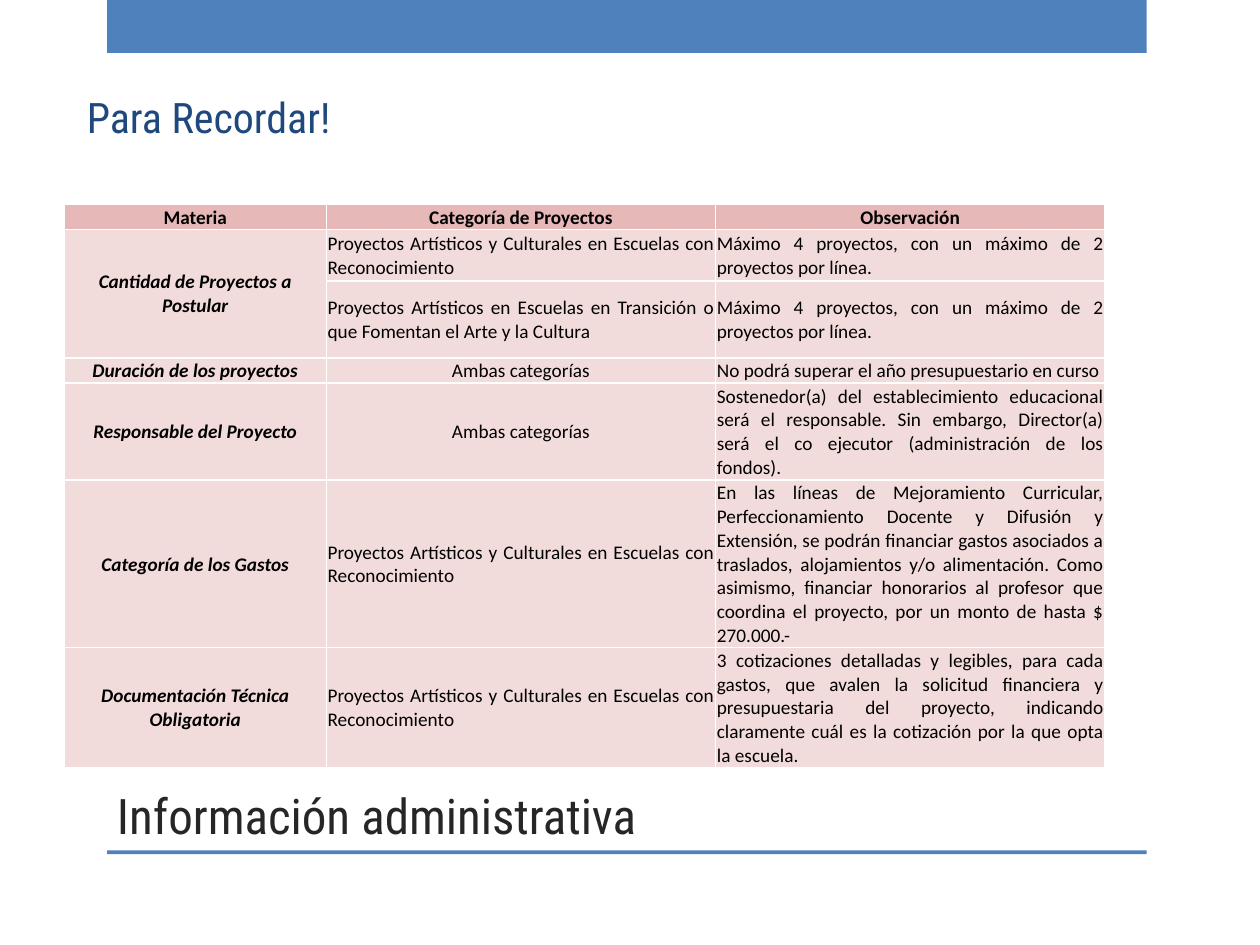
from lxml import etree
from pptx import Presentation
from pptx.dml.color import RGBColor
from pptx.enum import shapes, text
from pptx.oxml import ns
from pptx.util import Inches, Pt

BLUE, NAVY, CHARCOAL = "4F81BD", "1F497D", "262626"
HEADER_PINK, BODY_PINK, WHITE, BLACK = "E6B9B8", "F2DCDB", "FFFFFF", "000000"
TITLE_FONT, TABLE_FONT = "Roboto Condensed", "Calibri"

COLUMN_WIDTHS = [2.08, 3.09, 3.09]
ROW_HEIGHTS = [0.2, 0.41, 0.61, 0.2, 0.77, 1.33, 0.95]
RECOGNISED = "Proyectos Artísticos y Culturales en Escuelas con Reconocimiento"
BOTH = "Ambas categorías"
MAXIMUM = "Máximo 4 proyectos, con un máximo de 2 proyectos por línea."
ROWS = [
    ("Materia", "Categoría de Proyectos", "Observación"),
    ("Cantidad de Proyectos a Postular", RECOGNISED, MAXIMUM),
    ("", "Proyectos Artísticos en Escuelas en Transición o que Fomentan "
     "el Arte y la Cultura", MAXIMUM),
    ("Duración de los proyectos", BOTH,
     "No podrá superar el año presupuestario en curso"),
    ("Responsable del Proyecto", BOTH,
     "Sostenedor(a) del establecimiento educacional será el responsable. "
     "Sin embargo, Director(a) será el co ejecutor (administración de los "
     "fondos)."),
    ("Categoría de los Gastos", RECOGNISED,
     "En las líneas de Mejoramiento Curricular, Perfeccionamiento Docente y "
     "Difusión y Extensión, se podrán financiar gastos asociados a traslados, "
     "alojamientos y/o alimentación. Como asimismo, financiar honorarios al "
     "profesor que coordina el proyecto, por un monto de hasta $ 270.000.-"),
    ("Documentación Técnica Obligatoria", RECOGNISED,
     "3 cotizaciones detalladas y legibles, para cada gastos, que avalen la "
     "solicitud financiera y presupuestaria del proyecto, indicando "
     "claramente cuál es la cotización por la que opta la escuela."),
]


def color(value):
    return RGBColor.from_string(value)


def add_run(paragraph, words, font, size, fill, bold=False, italic=False):
    run = paragraph.add_run()
    run.text = words
    run.font.name = font
    run.font.size = Pt(size)
    run.font.color.rgb = color(fill)
    run.font.bold = bold
    run.font.italic = italic


def add_bar(slide, top, height):
    bar = slide.shapes.add_shape(shapes.MSO_SHAPE.RECTANGLE, Inches(0.85),
                                 Inches(top), Inches(8.25), Inches(height))
    bar.shadow.inherit = False
    bar.fill.solid()
    bar.fill.fore_color.rgb = color(BLUE)
    bar.line.fill.background()


def add_heading(slide, box, words, size, fill, anchor):
    shape = slide.shapes.add_textbox(*map(Inches, box))
    frame = shape.text_frame
    frame.word_wrap = True
    frame.vertical_anchor = anchor
    paragraph = frame.paragraphs[0]
    add_run(paragraph, words, TITLE_FONT, size, fill)
    return paragraph


def set_borders(cell):
    """Draw thin white lines on all sides; they go before the cell's fill."""
    properties = cell._tc.get_or_add_tcPr()
    for position, side in enumerate(("a:lnL", "a:lnR", "a:lnT", "a:lnB")):
        line = etree.Element(ns.qn(side), w=str(Pt(1)))
        fill = etree.SubElement(line, ns.qn("a:solidFill"))
        etree.SubElement(fill, ns.qn("a:srgbClr"), val=WHITE)
        properties.insert(position, line)


def fill_cell(cell, words, is_header, is_label):
    cell.fill.solid()
    cell.fill.fore_color.rgb = color(HEADER_PINK if is_header else BODY_PINK)
    set_borders(cell)
    cell.margin_left = cell.margin_right = cell.margin_top = Inches(0.01)
    cell.margin_bottom = 0
    cell.vertical_anchor = (text.MSO_ANCHOR.BOTTOM if is_header
                            else text.MSO_ANCHOR.MIDDLE)
    if not words:
        return
    paragraph = cell.text_frame.paragraphs[0]
    centred = is_header or is_label or words == BOTH
    paragraph.alignment = (text.PP_ALIGN.CENTER if centred
                           else text.PP_ALIGN.JUSTIFY)
    add_run(paragraph, words, TABLE_FONT, 11, BLACK,
            bold=is_header or is_label, italic=is_label and not is_header)


def add_project_table(slide):
    frame = slide.shapes.add_table(
        len(ROWS), len(COLUMN_WIDTHS), Inches(0.51), Inches(1.62),
        Inches(sum(COLUMN_WIDTHS)), Inches(sum(ROW_HEIGHTS)))
    table = frame.table
    for column, width in zip(table.columns, COLUMN_WIDTHS):
        column.width = Inches(width)
    for row, height in zip(table.rows, ROW_HEIGHTS):
        row.height = Inches(height)
    table.cell(1, 0).merge(table.cell(2, 0))
    for row_index, row in enumerate(ROWS):
        for column_index, words in enumerate(row):
            fill_cell(table.cell(row_index, column_index), words,
                      is_header=row_index == 0, is_label=column_index == 0)


def main():
    presentation = Presentation()
    presentation.slide_width = Inches(10)
    presentation.slide_height = Inches(7.5)
    slide = presentation.slides.add_slide(presentation.slide_layouts[6])
    add_bar(slide, 0, 0.42)
    add_bar(slide, 6.75, 0.03)
    add_heading(slide, (0.83, 5, 7.42, 1.75), "Información administrativa",
                28, CHARCOAL, text.MSO_ANCHOR.BOTTOM)
    add_project_table(slide)
    reminder = add_heading(slide, (0.59, 0.68, 8.11, 0.5), "Para Recordar!",
                           24, NAVY, text.MSO_ANCHOR.TOP)
    reminder.space_before = Pt(4.8)
    presentation.save("out.pptx")


if __name__ == "__main__":
    main()
